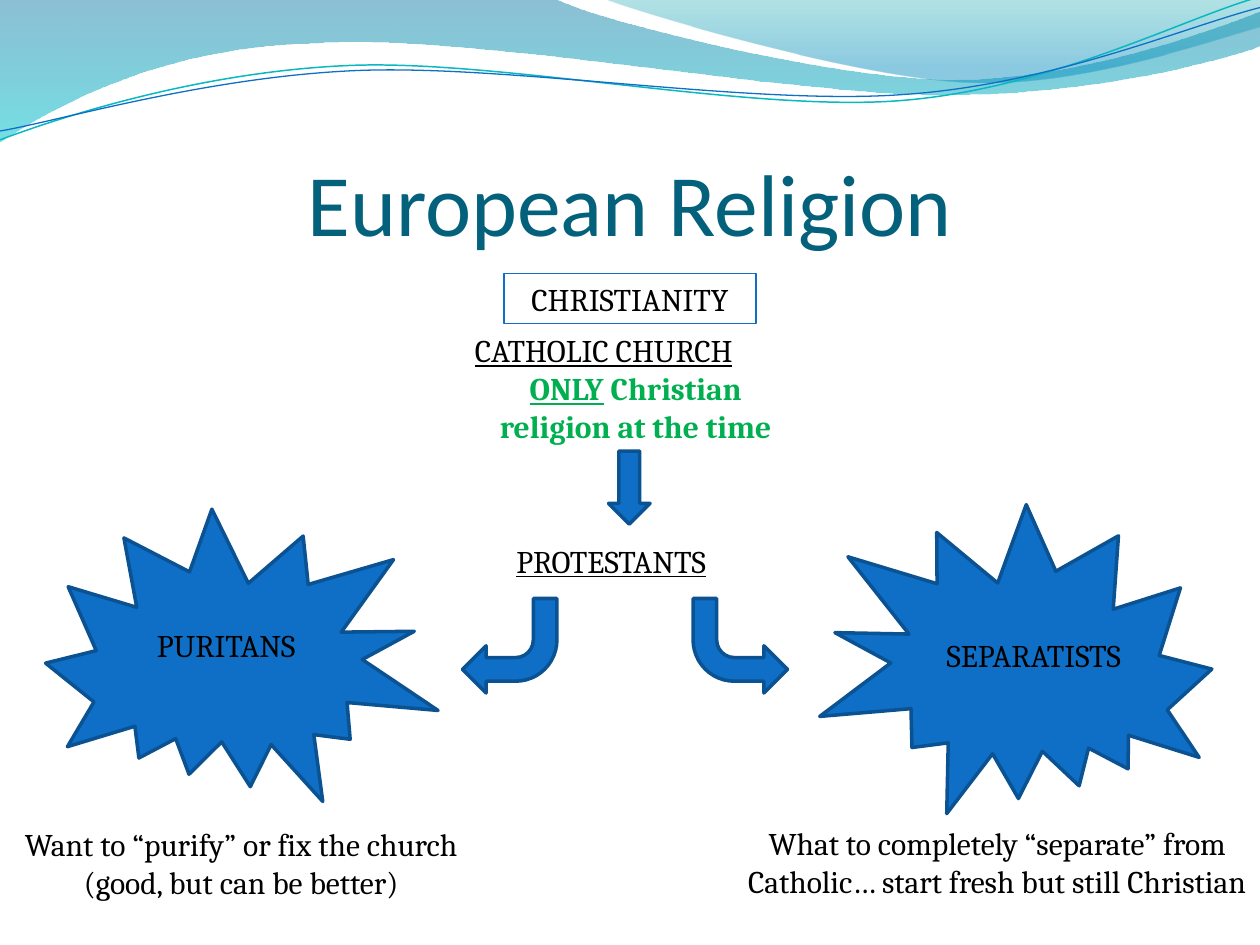
from math import cos, radians, sin

from lxml.etree import SubElement
from pptx import Presentation
from pptx.dml.color import RGBColor
from pptx.enum.shapes import MSO_SHAPE
from pptx.enum.text import MSO_ANCHOR, MSO_AUTO_SIZE, PP_ALIGN
from pptx.oxml.ns import qn
from pptx.util import Inches, Pt

THEME = {
    "title_font": "Calibri", "title_size": 50, "title": "04617B",
    "body_font": "Cambria", "body_size": 18, "text": "000000",
    "accent": "0F6FC6", "outline": "0B5292", "highlight": "00B050", "teal": "0AB8BF",
}
LEFT, CENTER = PP_ALIGN.LEFT, PP_ALIGN.CENTER

TITLE = "European Religion"

# Box (left, top, width, height), then paragraphs: (alignment, [(text, style), ...])
CHRISTIANITY = ((4, 2.17, 2, 0.4), [(CENTER, [("CHRISTIANITY", "")])])
LABELS = [
    ((3.67, 2.58, 2.75, 1.01), [
        (LEFT, [("CATHOLIC CHURCH", "u")]),
        (CENTER, [("ONLY", "ubh"), (" Christian religion at the time", "bh")]),
    ]),
    ((4, 4.25, 2.75, 0.4), [(LEFT, [("PROTESTANTS", "u")])]),
    ((0.92, 4.92, 1.75, 0.4), [(CENTER, [("PURITANS", "")])]),
    ((7.33, 5, 1.75, 0.4), [(CENTER, [("SEPARATISTS", "")])]),
    ((-0.17, 6.5, 4.17, 0.71), [
        (CENTER, [("Want to “purify” or fix the church", "")]),
        (CENTER, [("(good, but can be better)", "")]),
    ]),
    ((5.83, 6.49, 4.17, 1.01), [
        (CENTER, [("What to completely “separate” from Catholic… "
                   "start fresh but still Christian", "")]),
    ]),
]

# Preset, box, rotation, mirrored
SYMBOLS = [
    (MSO_SHAPE.DOWN_ARROW, (4.83, 3.58, 0.33, 0.58), 0, False),
    (MSO_SHAPE.BENT_ARROW, (3.67, 4.75, 0.75, 0.75), 180, False),
    (MSO_SHAPE.BENT_ARROW, (5.5, 4.75, 0.75, 0.75), 180, True),
    (MSO_SHAPE.EXPLOSION2, (0.44, 3.93, 3, 2.65), 32.8, False),
    (MSO_SHAPE.EXPLOSION2, (6.56, 3.83, 2.92, 2.92), 324.3, True),
]

# Wave outlines: a pair is a corner, six numbers are a Bezier curve.
# Bands have gradient stops (position, colour, opacity); strands have a line.
BANDS = [
    ([(0, 0), (4.4, -0.01), (4.76, 0.17, 6.64, 0.63, 7.58, 0.63),
      (8.53, 0.63, 9.58, 0.26, 10, 0.09), (10.01, 0.36),
      (9.83, 0.44, 8.7, 0.76, 7.46, 0.75), (6.22, 0.75, 3.82, 0.28, 2.57, 0.34),
      (1.29, 0.36, 0.46, 0.83, -0.01, 1.13), (0, 0)],
     [(0, "0074A1", 45), (1, "00C6CF", 55)]),
    ([(4.79, -0.01), (5.09, 0.11, 6.82, 0.62, 7.69, 0.65),
      (8.56, 0.69, 9.61, 0.32, 10, 0.21), (10, 0), (4.79, -0.01)],
     [(0, "00A1A9", 30), (0.8, "008BBF", 45)]),
]
STRAND_TILT = 357.3
STRAND_CENTER = (4.99, 0.58)
STRANDS = [
    ([(0, 1.11), (0.48, 0.93, 1.58, 0.57, 2.77, 0.52),
      (3.95, 0.47, 5.93, 0.89, 7.13, 0.8), (8.33, 0.71, 9.38, 0.15, 9.98, -0.02)],
     "teal", 0.85),
    ([(0, 1.04), (0.47, 0.96, 1.64, 0.61, 2.83, 0.56),
      (4.03, 0.51, 5.97, 0.84, 7.17, 0.75), (8.36, 0.67, 9.41, 0.21, 10, 0.06)],
     "accent", 0.75),
]


def color(name):
    return RGBColor.from_string(THEME[name])


def level(x, y, tilt):
    """Turn a point back by the tilt, so that the tilted shape passes through it."""
    center_x, center_y = STRAND_CENTER
    dx, dy, angle = x - center_x, y - center_y, radians(-tilt)
    return (center_x + dx * cos(angle) - dy * sin(angle),
            center_y + dx * sin(angle) + dy * cos(angle))


def add_wave(slide, outline, close, tilt=0):
    parts = [[tuple(map(Inches, level(x, y, tilt))) for x, y in zip(part[::2], part[1::2])]
             for part in outline]
    ends = [part[-1] for part in parts]
    builder = slide.shapes.build_freeform(*ends[0])
    builder.add_line_segments(ends[1:], close=close)
    wave = builder.convert_to_shape()
    # Bend the segments that have control points
    for segment, points in zip(list(wave.element.iter(qn("a:lnTo"))), parts[1:]):
        if len(points) == 3:
            curve = segment.getparent().makeelement(qn("a:cubicBezTo"))
            for x, y in points:
                SubElement(curve, qn("a:pt"), x=str(x - wave.left), y=str(y - wave.top))
            segment.getparent().replace(segment, curve)
    wave.rotation = tilt
    wave.shadow.inherit = False
    return wave


def add_band(slide, outline, stops):
    band = add_wave(slide, outline, True)
    band.fill.gradient()
    band.fill.gradient_angle = 270
    for stop, (position, rgb, _) in zip(band.fill.gradient_stops, stops):
        stop.position = position
        stop.color.rgb = RGBColor.from_string(rgb)
    for node, (_, _, opacity) in zip(band.element.spPr.iter(qn("a:srgbClr")), stops):
        SubElement(node, qn("a:alpha"), val=str(opacity * 1000))
    band.line.fill.background()


def set_line(shape, name, width):
    shape.line.color.rgb = color(name)
    shape.line.width = Pt(width)


def write(shape, paragraphs):
    frame = shape.text_frame
    frame.word_wrap = True
    frame.auto_size = MSO_AUTO_SIZE.SHAPE_TO_FIT_TEXT
    frame.vertical_anchor = MSO_ANCHOR.TOP
    for index, (alignment, runs) in enumerate(paragraphs):
        paragraph = frame.add_paragraph() if index else frame.paragraphs[0]
        paragraph.alignment = alignment
        for text, style in runs:
            run = paragraph.add_run()
            run.text = text
            run.font.name = THEME["body_font"]
            run.font.size = Pt(THEME["body_size"])
            run.font.underline = "u" in style
            run.font.bold = "b" in style
            run.font.color.rgb = color("highlight" if "h" in style else "text")


def add_symbol(slide, preset, box, rotation, mirrored):
    symbol = slide.shapes.add_shape(preset, *map(Inches, box))
    symbol.rotation = rotation
    if mirrored:
        symbol.element.spPr.xfrm.set("flipH", "1")
    symbol.shadow.inherit = False
    symbol.fill.solid()
    symbol.fill.fore_color.rgb = color("accent")
    set_line(symbol, "outline", 2)


def set_title(slide):
    title = slide.shapes.title
    title.left, title.top, title.width, title.height = map(Inches, (0.5, 0.77, 9, 1.25))
    frame = title.text_frame
    frame.vertical_anchor = MSO_ANCHOR.BOTTOM
    frame.margin_left = frame.margin_right = frame.margin_bottom = 0
    frame.paragraphs[0].alignment = CENTER
    run = frame.paragraphs[0].add_run()
    run.text = TITLE
    run.font.name = THEME["title_font"]
    run.font.size = Pt(THEME["title_size"])
    run.font.color.rgb = color("title")
    title.element.getparent().append(title.element)  # in front of the waves


def main():
    deck = Presentation()
    deck.slide_width, deck.slide_height = Inches(10), Inches(7.5)
    slide = deck.slides.add_slide(deck.slide_layouts[5])

    # Wave header
    for outline, stops in BANDS:
        add_band(slide, outline, stops)
    for outline, name, width in STRANDS:
        strand = add_wave(slide, outline, False, STRAND_TILT)
        strand.fill.background()
        set_line(strand, name, width)

    set_title(slide)

    # Framed starting point
    box, paragraphs = CHRISTIANITY
    frame_box = slide.shapes.add_shape(MSO_SHAPE.RECTANGLE, *map(Inches, box))
    frame_box.shadow.inherit = False
    frame_box.fill.background()
    set_line(frame_box, "accent", 0.75)
    write(frame_box, paragraphs)

    # Diagram: symbols below their labels
    for symbol in SYMBOLS:
        add_symbol(slide, *symbol)
    for box, paragraphs in LABELS:
        write(slide.shapes.add_textbox(*map(Inches, box)), paragraphs)

    deck.save("out.pptx")


if __name__ == "__main__":
    main()
